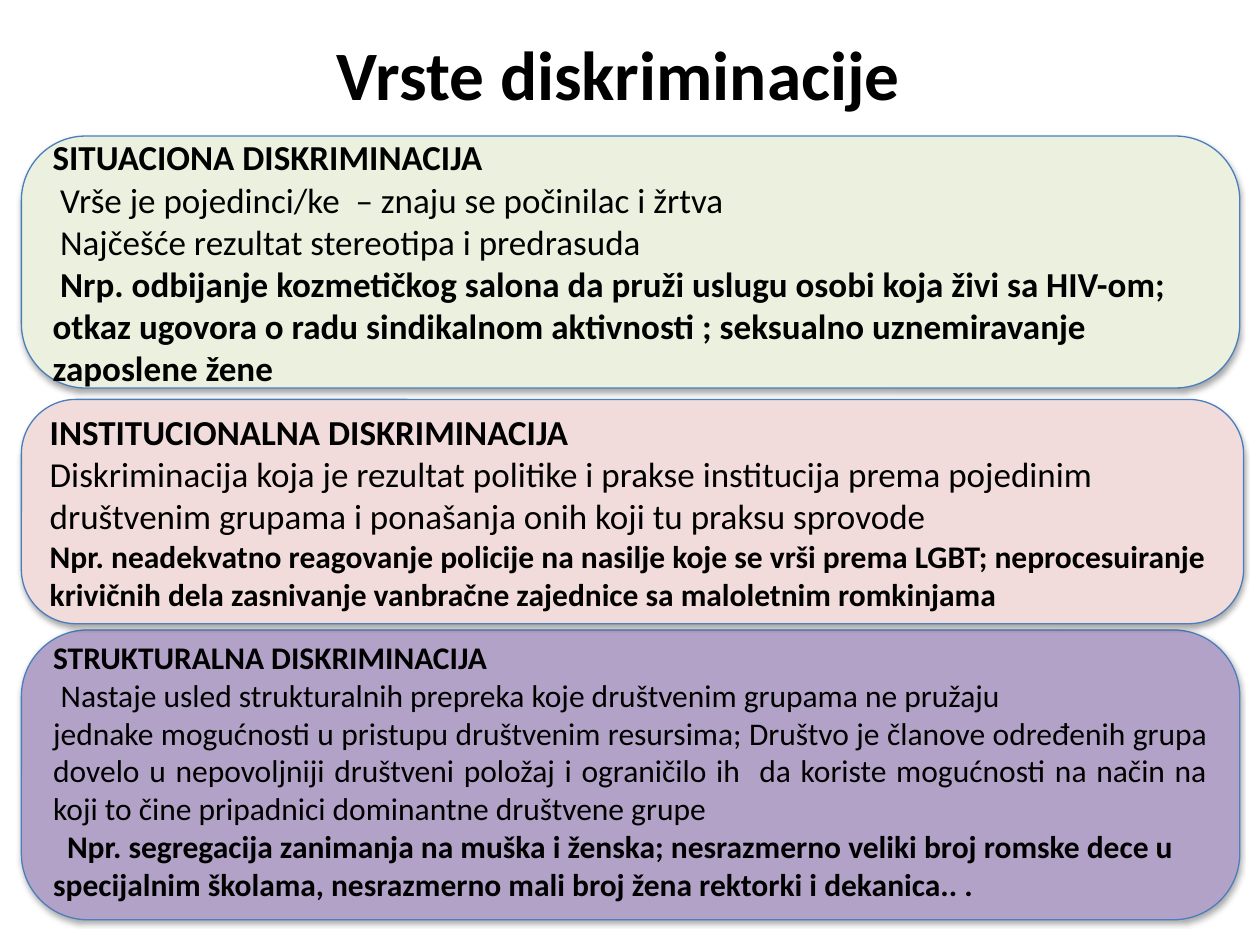
import pptx
import pptx.util
import pptx.dml.color
import pptx.enum.shapes
import pptx.enum.text
import pptx.oxml
import pptx.oxml.ns

Inches = pptx.util.Inches
ALIGN = pptx.enum.text.PP_ALIGN
COLORS = {
    "text": "000000",
    "line": "4B7EBC",
    "green": "EBF1DE",
    "pink": "F2DCDB",
    "purple": "B3A2C7",
}
SHADOW = (
    f'<a:effectLst {pptx.oxml.ns.nsdecls("a")}>'
    '<a:outerShdw blurRad="39370" dist="22860" dir="5400000" rotWithShape="0">'
    '<a:srgbClr val="000000"><a:alpha val="35000"/></a:srgbClr>'
    "</a:outerShdw></a:effectLst>"
)


class Deck:
    font = "Calibri"

    def __init__(self, width, height):
        self.prs = pptx.Presentation()
        self.prs.slide_width = Inches(width)
        self.prs.slide_height = Inches(height)
        self.s = self.prs.slides.add_slide(self.prs.slide_layouts[6])

    def color(self, name):
        return pptx.dml.color.RGBColor.from_string(COLORS[name])

    def paragraphs(self, tf, items):
        tf.word_wrap = True
        tf.vertical_anchor = pptx.enum.text.MSO_ANCHOR.MIDDLE
        for i, (text, size, bold, align, indent) in enumerate(items):
            p = tf.paragraphs[0] if i == 0 else tf.add_paragraph()
            p.text = text
            p.alignment = align
            p.font.name = self.font
            p.font.size = pptx.util.Pt(size)
            p.font.bold = bold
            p.font.color.rgb = self.color("text")
            if indent:
                pPr = p._p.get_or_add_pPr()
                pPr.set("marL", "0")
                pPr.set("indent", str(Inches(indent)))

    def title(self, text, left, top, width, height):
        sp = self.s.shapes.add_textbox(*map(Inches, (left, top, width, height)))
        sp.text_frame.margin_right = Inches(0.22)
        self.paragraphs(sp.text_frame, [(text, 39.6, True, ALIGN.CENTER, 0)])

    def panel(self, fill, top, width, height, corner, items, bottom=0.05):
        sp = self.s.shapes.add_shape(
            pptx.enum.shapes.MSO_SHAPE.ROUNDED_RECTANGLE,
            *map(Inches, (0.17, top, width, height)),
        )
        sp.adjustments[0] = corner
        sp.fill.solid()
        sp.fill.fore_color.rgb = self.color(fill)
        sp.line.color.rgb = self.color("line")
        sp.line.width = pptx.util.Pt(0.75)
        sp._element.spPr.append(pptx.oxml.parse_xml(SHADOW))
        sp.text_frame.margin_bottom = Inches(bottom)
        self.paragraphs(sp.text_frame, items)


def main():
    deck = Deck(10, 7.5)
    deck.panel("green", 1.08, 9.67, 2, 0.255, [
        ("SITUACIONA DISKRIMINACIJA", 20, True, ALIGN.LEFT, 0),
        ("Vrše je pojedinci/ke  – znaju se počinilac i žrtva", 20, False, ALIGN.LEFT, 0.06),
        ("Najčešće rezultat stereotipa i predrasuda", 20, False, ALIGN.LEFT, 0.06),
        ("Nrp. odbijanje kozmetičkog salona da pruži uslugu osobi koja živi sa HIV-om; "
         "otkaz ugovora o radu sindikalnom aktivnosti ; seksualno uznemiravanje "
         "zaposlene žene", 20, True, ALIGN.LEFT, 0.06),
    ])
    deck.panel("purple", 5, 9.67, 2.3, 0.229, [
        ("STRUKTURALNA DISKRIMINACIJA", 18, True, ALIGN.LEFT, 0),
        ("Nastaje usled strukturalnih prepreka koje društvenim grupama ne pružaju",
         18, False, ALIGN.LEFT, 0.06),
        ("jednake mogućnosti u pristupu društvenim resursima; Društvo je članove "
         "određenih grupa dovelo u nepovoljniji društveni položaj i ograničilo ih  da "
         "koriste mogućnosti na način na koji to čine pripadnici dominantne društvene "
         "grupe", 18, False, ALIGN.JUSTIFY, 0),
        ("Npr. segregacija zanimanja na muška i ženska; nesrazmerno veliki broj romske "
         "dece u specijalnim školama, nesrazmerno mali broj žena rektorki i dekanica.. .",
         18, True, ALIGN.LEFT, 0.11),
    ], bottom=0.12)
    deck.panel("pink", 3.17, 9.7, 1.78, 0.243, [
        ("INSTITUCIONALNA DISKRIMINACIJA", 20, True, ALIGN.LEFT, 0),
        ("Diskriminacija koja je rezultat politike i prakse institucija prema pojedinim "
         "društvenim grupama i ponašanja onih koji tu praksu sprovode",
         20, False, ALIGN.LEFT, 0),
        ("Npr. neadekvatno reagovanje policije na nasilje koje se vrši prema LGBT; "
         "neprocesuiranje krivičnih dela zasnivanje vanbračne zajednice sa maloletnim "
         "romkinjama", 18, True, ALIGN.LEFT, 0),
    ])
    deck.title("Vrste diskriminacije", 0.47, 0.23, 9, 0.7)
    deck.prs.save("out.pptx")


if __name__ == "__main__":
    main()
